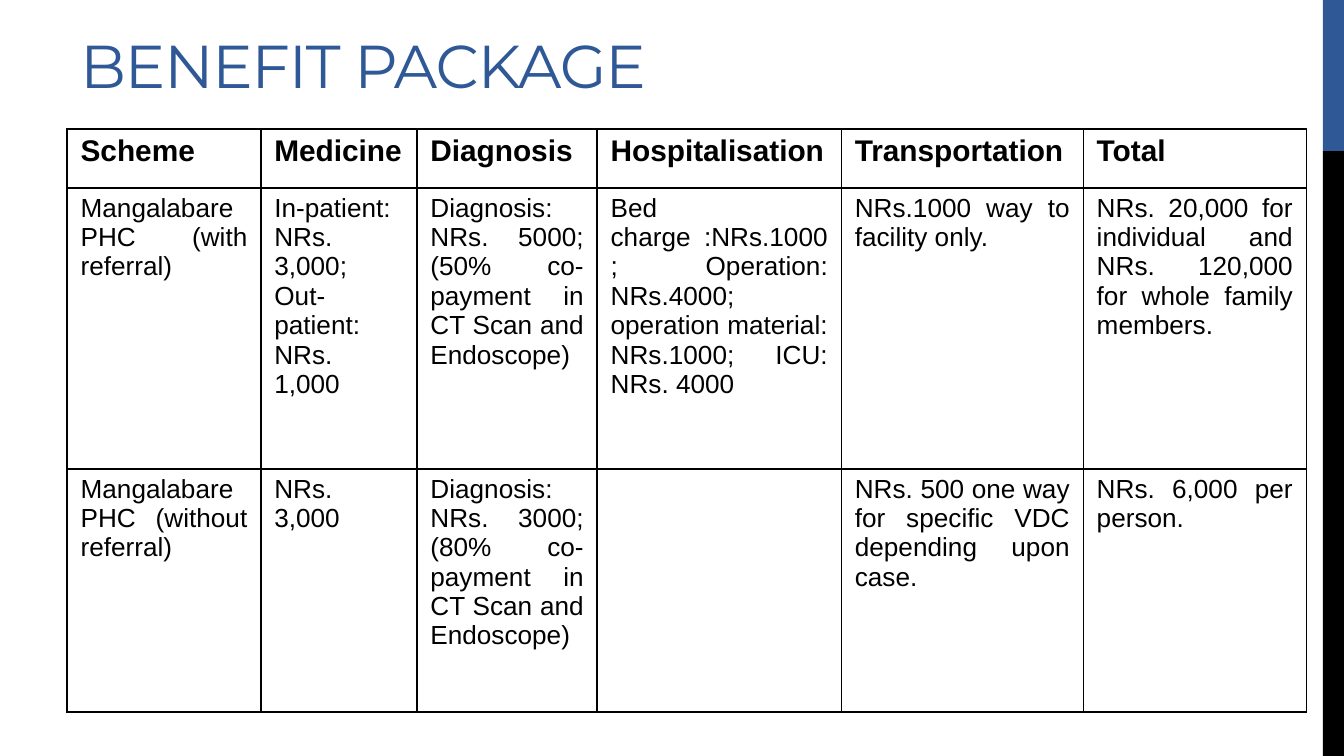
from pptx import Presentation
from pptx.dml.color import RGBColor
from pptx.enum.shapes import MSO_SHAPE as Shape
from pptx.enum.text import MSO_ANCHOR as Anchor, PP_ALIGN as Align
from pptx.oxml import parse_xml
from pptx.oxml.ns import nsdecls
from pptx.util import Pt

HEADINGS = ["Scheme", "Medicine", "Diagnosis", "Hospitalisation", "Transportation", "Total"]
SCHEMES = [
    [
        "Mangalabare PHC (with referral) ",
        "In-patient: NRs. 3,000; Out-patient: NRs. 1,000",
        "Diagnosis: NRs. 5000; (50% co-payment in CT Scan and Endoscope)",
        "Bed charge :NRs.1000; Operation: NRs.4000; operation material: NRs.1000; ICU: NRs. 4000",
        "NRs.1000 way to facility only.",
        "NRs. 20,000 for individual and NRs. 120,000 for whole family members.",
    ],
    [
        "Mangalabare PHC (without referral) ",
        "NRs. 3,000",
        "Diagnosis: NRs. 3000; (80% co-payment in CT Scan and Endoscope)",
        "",
        "NRs. 500 one way for specific VDC depending upon case.",
        "NRs. 6,000 per person.",
    ],
]
COLUMN_WIDTHS = [103.8, 83.6, 96.6, 130.8, 129.6, 119.5]
ROW_HEIGHTS = [31.7, 150.5, 130.3]


def color(value):
    return RGBColor.from_string(value)


def write(frame, text, size, font="Arial", ink="000000", bold=False, align=Align.LEFT, spacing=0):
    frame.word_wrap = True
    paragraph = frame.paragraphs[0]
    paragraph.alignment = align
    if not text:
        paragraph.font.size = Pt(size)
        return
    run = paragraph.add_run()
    run.text = text
    run.font.name = font
    run.font.size = Pt(size)
    run.font.bold = bold
    run.font.color.rgb = color(ink)
    if spacing:
        run.font._element.set("spc", str(round(spacing * 100)))


class BenefitSlide:
    """Holds the slide and the style shared by its title, bars and table."""

    accent, dark, paper = "2F5897", "000000", "FFFFFF"

    def __init__(self, slide):
        self.slide = slide

    def bar(self, left, top, width, height, fill):
        shape = self.slide.shapes.add_shape(Shape.RECTANGLE, Pt(left), Pt(top), Pt(width), Pt(height))
        shape.shadow.inherit = False
        shape.fill.solid()
        shape.fill.fore_color.rgb = color(fill)
        shape.line.fill.background()

    def title(self, text, left, top, width, height):
        box = self.slide.shapes.add_textbox(Pt(left), Pt(top), Pt(width), Pt(height))
        box.text_frame.vertical_anchor = Anchor.BOTTOM
        write(box.text_frame, text, 32.4, font="Montserrat", ink=self.accent, spacing=-0.6)

    def borders(self, cell):
        properties = cell._tc.get_or_add_tcPr()
        for side in "LRTB":
            properties.append(parse_xml(
                f'<a:ln{side} {nsdecls("a")} w="{Pt(1)}"><a:solidFill>'
                f'<a:srgbClr val="{self.dark}"/></a:solidFill></a:ln{side}>'
            ))

    def table(self, rows, left, top, widths, heights):
        frame = self.slide.shapes.add_table(
            len(rows), len(widths), Pt(left), Pt(top), Pt(sum(widths)), Pt(sum(heights))
        )
        table = frame.table
        for column, width in zip(table.columns, widths):
            column.width = Pt(width)
        for row, height in zip(table.rows, heights):
            row.height = Pt(height)
        for row_index, texts in enumerate(rows):
            heading = row_index == 0
            for column_index, text in enumerate(texts):
                cell = table.cell(row_index, column_index)
                self.borders(cell)
                cell.fill.solid()
                cell.fill.fore_color.rgb = color(self.paper)
                cell.margin_left = cell.margin_right = Pt(7.2)
                cell.margin_top = cell.margin_bottom = Pt(3)
                ragged = column_index == 1 and not heading
                write(cell.text_frame, text, 16 if heading else 14, ink=self.dark, bold=heading,
                      align=Align.LEFT if ragged else Align.JUSTIFY)


def main():
    presentation = Presentation()
    presentation.slide_width, presentation.slide_height = Pt(720), Pt(405)
    page = BenefitSlide(presentation.slides.add_slide(presentation.slide_layouts[6]))
    page.bar(708.75, 0, 11.25, 81, page.accent)
    page.bar(708.75, 81, 11.25, 324, page.dark)
    page.title("BENEFIT PACKAGE", 36, 9.4, 456, 48)
    page.table([HEADINGS, *SCHEMES], 36, 69, COLUMN_WIDTHS, ROW_HEIGHTS)
    presentation.save("out.pptx")


if __name__ == "__main__":
    main()
